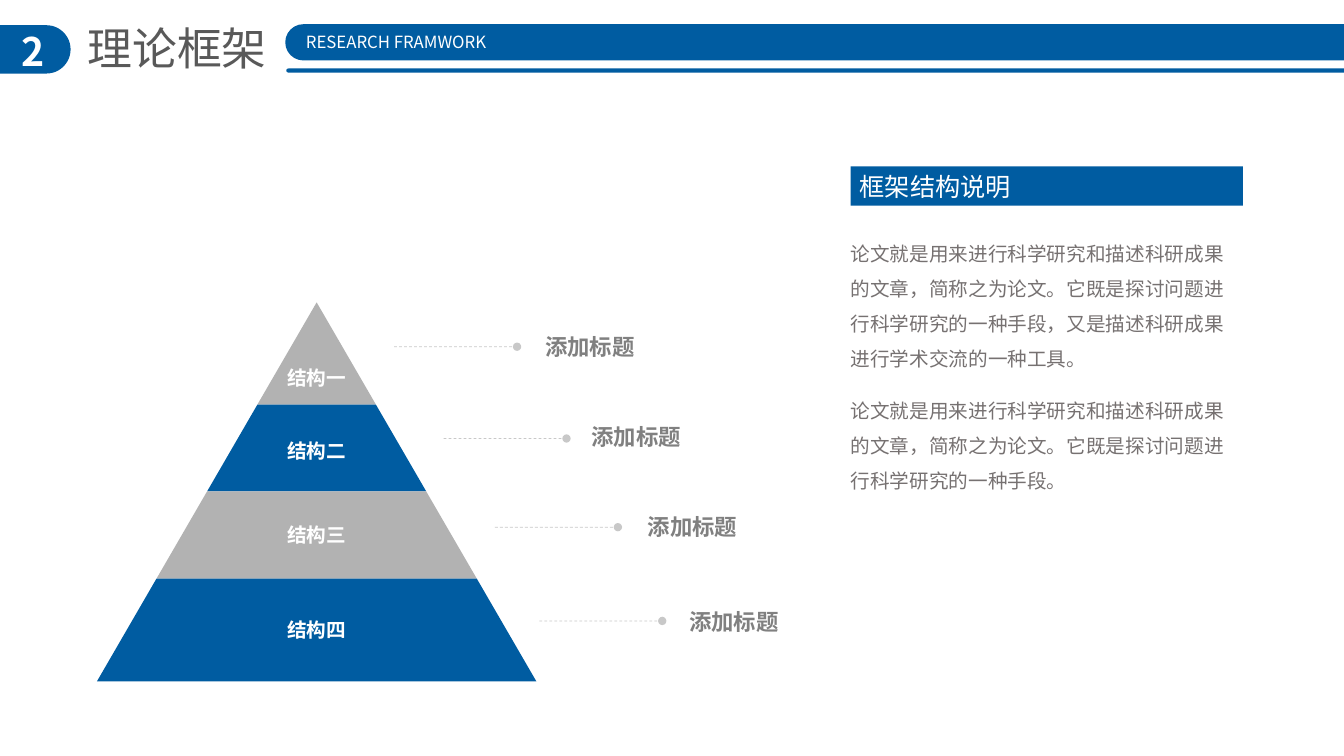
"""Build the research framework slide with a four-level pyramid."""
from itertools import cycle, pairwise
from typing import NamedTuple

from lxml.etree import SubElement
from pptx import Presentation
from pptx.dml.color import RGBColor
from pptx.enum.dml import MSO_LINE
from pptx.enum.shapes import MSO_CONNECTOR, MSO_SHAPE
from pptx.enum.text import MSO_AUTO_SIZE, PP_ALIGN
from pptx.oxml.ns import qn
from pptx.util import Inches, Pt

COLUMNS, ROWS = 160, 90
SLIDE_WIDTH, SLIDE_HEIGHT = Inches(13.33), Inches(7.5)
FONT = "Noto Sans CJK SC"
BLUE, GREY, WHITE = "005CA1", "B2B2B2", "FFFFFF"


class Area(NamedTuple):
    left: float
    top: float
    width: float
    height: float


class Caption(NamedTuple):
    text: str
    area: Area
    style: dict
    color: str = WHITE
    wrap: bool = False
    layout: dict = {}


class Band(NamedTuple):
    area: Area
    preset: MSO_SHAPE = MSO_SHAPE.ROUNDED_RECTANGLE


class Callout(NamedTuple):
    line_left: float
    line_top: float
    title_left: float
    title_top: float


CALLOUT_LENGTH = 14.64
CALLOUT_STYLE = {"size": Pt(16), "bold": True}
LEVEL_STYLE = {"size": Pt(14), "bold": True}
BODY_STYLE = {"size": Pt(14)}
BODY_LAYOUT = {"line_spacing": 1.5}
CENTERED = {"alignment": PP_ALIGN.CENTER}
BODY_COLOR = "767171"

APEX, HALF_BASE = 37.7, 26.16
LEVEL_EDGES = (36, 48.16, 58.5, 68.88, 81.12)

CALLOUTS = (
    Callout(46.92, 41.28, 63.72, 39.12),
    Callout(52.8, 52.2, 69.24, 49.8),
    Callout(58.92, 62.76, 75.96, 60.48),
    Callout(64.2, 73.92, 80.88, 71.76),
)
BANDS = (
    Band(Area(101.28, 19.8, 46.68, 4.68), MSO_SHAPE.RECTANGLE),
    Band(Area(-3.36, 3, 11.76, 5.76)),
    Band(Area(33.96, 2.88, 132.36, 4.32)),
    Band(Area(34.08, 8.16, 132.36, 0.48)),
)
LEVEL_NAMES = (("结构一", 42.96), ("结构二", 51.72), ("结构三", 61.68), ("结构四", 72.96))
CAPTIONS = (
    *(Caption(name, Area(33, top, 9.48, 4.08), LEVEL_STYLE) for name, top in LEVEL_NAMES),
    Caption("框架结构说明", Area(101.16, 19.8, 20.64, 4.8), {"size": Pt(18)}, wrap=True),
    Caption(
        "论文就是用来进行科学研究和描述科研成果的文章，简称之为论文。它既是探讨问题进行科学研究的一种手段，"
        "又是描述科研成果进行学术交流的一种工具。",
        Area(100.08, 26.76, 48.36, 18.12), BODY_STYLE, BODY_COLOR, True, BODY_LAYOUT,
    ),
    Caption(
        "论文就是用来进行科学研究和描述科研成果的文章，简称之为论文。它既是探讨问题进行科学研究的一种手段。",
        Area(100.08, 45.48, 48.36, 13.92), BODY_STYLE, BODY_COLOR, True, BODY_LAYOUT,
    ),
    Caption("2", Area(0.84, 2.64, 6.12, 6.84), {"size": Pt(28), "bold": True},
            wrap=True, layout=CENTERED),
    Caption("理论框架", Area(9.24, 1.92, 24, 7.68), {"size": Pt(32)}, "595959"),
    Caption("RESEARCH FRAMWORK", Area(34.44, 3.24, 25.44, 3.6), {"size": Pt(12)},
            layout=CENTERED),
)


def column(count: float) -> int:
    return round(SLIDE_WIDTH * count / COLUMNS)


def row(count: float) -> int:
    return round(SLIDE_HEIGHT * count / ROWS)


def place(area: Area) -> tuple[int, int, int, int]:
    return column(area.left), row(area.top), column(area.width), row(area.height)


def paint(fill, color: str) -> None:
    fill.solid()
    fill.fore_color.rgb = RGBColor.from_string(color)


def finish(shape, color: str) -> None:
    paint(shape.fill, color)
    shape.line.fill.background()
    shape.shadow.inherit = False


def draw_band(shapes, band: Band) -> None:
    shape = shapes.add_shape(band.preset, *place(band.area))
    if band.preset == MSO_SHAPE.ROUNDED_RECTANGLE:
        shape.adjustments[0] = 0.5
    finish(shape, BLUE)


def draw_caption(shapes, caption: Caption) -> None:
    frame = shapes.add_textbox(*place(caption.area)).text_frame
    frame.word_wrap = caption.wrap
    frame.auto_size = MSO_AUTO_SIZE.SHAPE_TO_FIT_TEXT
    paragraph = frame.paragraphs[0]
    for attribute, value in caption.layout.items():
        setattr(paragraph, attribute, value)
    run = paragraph.add_run()
    run.text = caption.text
    for attribute, value in {"name": FONT, **caption.style}.items():
        setattr(run.font, attribute, value)
    paint(run.font.fill, caption.color)
    SubElement(run.font._element, qn("a:ea"), typeface=FONT)


def draw_callout(shapes, callout: Callout) -> None:
    height = row(callout.line_top)
    leader = shapes.add_connector(
        MSO_CONNECTOR.STRAIGHT, column(callout.line_left), height,
        column(callout.line_left + CALLOUT_LENGTH), height,
    )
    paint(leader.line.fill, GREY)
    for attribute, value in {"width": Pt(0.5), "dash_style": MSO_LINE.DASH}.items():
        setattr(leader.line, attribute, value)
    properties = leader._element.spPr
    tint = properties.find(".//" + qn("a:srgbClr"))
    SubElement(tint, qn("a:alpha"), val="70000")
    SubElement(properties.find(qn("a:ln")), qn("a:tailEnd"), type="oval")
    SubElement(properties, qn("a:effectLst"))
    title_area = Area(callout.title_left, callout.title_top, 13.2, 4.44)
    draw_caption(shapes, Caption("添加标题", title_area, CALLOUT_STYLE, "808080"))


def draw_level(shapes, top: float, bottom: float, color: str) -> None:
    slope = HALF_BASE / (LEVEL_EDGES[-1] - LEVEL_EDGES[0])
    upper, lower = ((edge - LEVEL_EDGES[0]) * slope for edge in (top, bottom))
    corners = [
        (column(APEX + offset), row(edge))
        for offset, edge in ((-upper, top), (upper, top), (lower, bottom), (-lower, bottom))
    ]
    outline = shapes.build_freeform(*corners[0])
    outline.add_line_segments(corners[1:], close=True)
    finish(outline.convert_to_shape(), color)


def main() -> None:
    deck = Presentation()
    deck.slide_width, deck.slide_height = SLIDE_WIDTH, SLIDE_HEIGHT
    shapes = deck.slides.add_slide(deck.slide_layouts[6]).shapes
    for callout in CALLOUTS:
        draw_callout(shapes, callout)
    for (top, bottom), color in zip(pairwise(LEVEL_EDGES), cycle((GREY, BLUE))):
        draw_level(shapes, top, bottom, color)
    for band in BANDS:
        draw_band(shapes, band)
    for caption in CAPTIONS:
        draw_caption(shapes, caption)
    deck.save("out.pptx")


if __name__ == "__main__":
    main()
